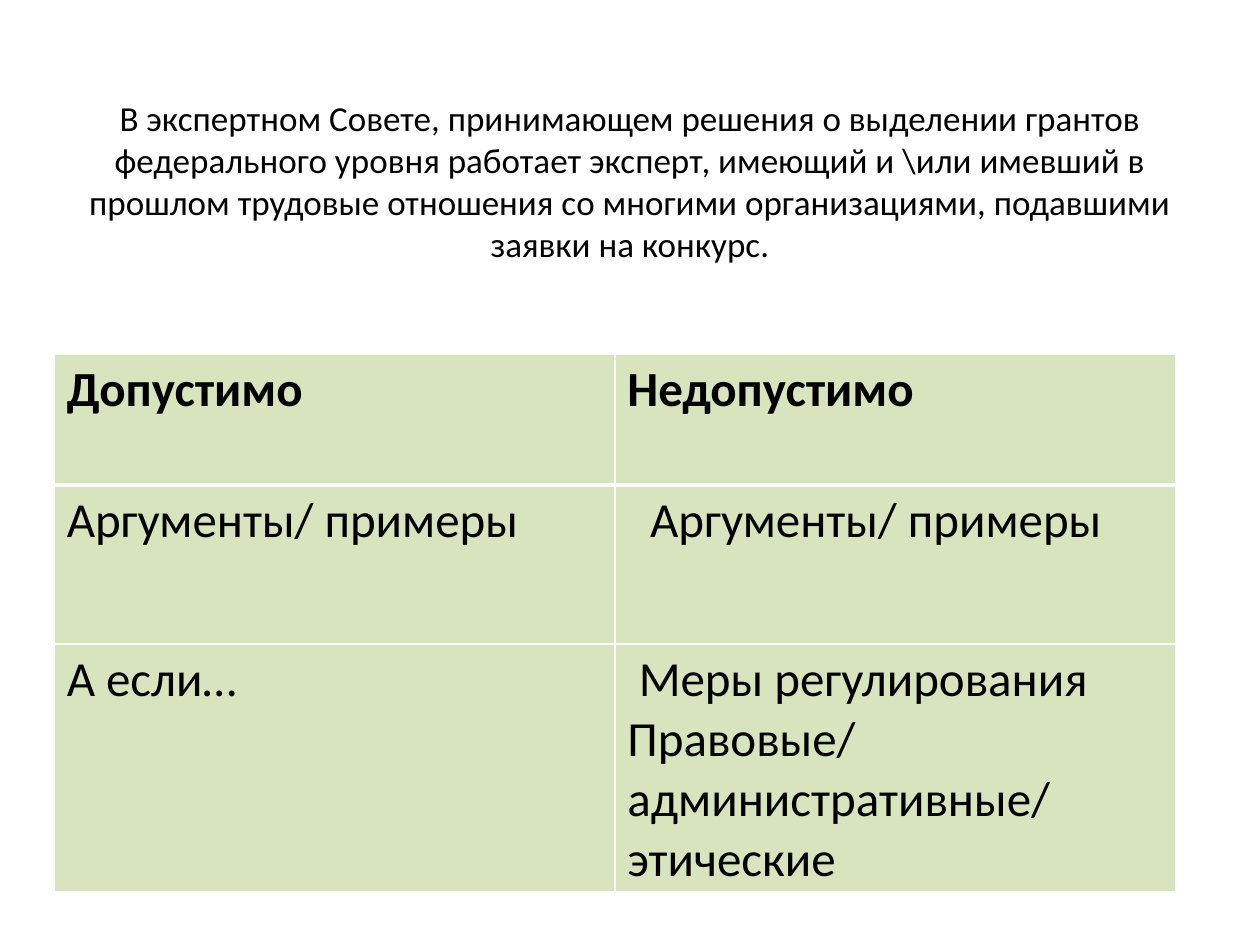
from lxml import etree
from pptx import Presentation
from pptx.dml.color import RGBColor
from pptx.enum.text import MSO_ANCHOR, PP_ALIGN
from pptx.oxml.ns import qn
from pptx.util import Inches, Pt

MIDDLE = MSO_ANCHOR.MIDDLE
CENTER = PP_ALIGN.CENTER
BLACK = RGBColor(0x00, 0x00, 0x00)
WHITE = RGBColor(0xFF, 0xFF, 0xFF)
GREEN = RGBColor(0xD7, 0xE4, 0xBD)
FONT = "Calibri"

QUESTION = (
    "В экспертном Совете, принимающем решения о выделении грантов "
    "федерального уровня работает эксперт, имеющий и \\или имевший в "
    "прошлом трудовые отношения со многими организациями, подавшими "
    "заявки на конкурс."
)
ROW_HEIGHTS = [1.04, 1.26, 1.97]
ROWS = [
    [[("Допустимо", 0)], [("Недопустимо", 0)]],
    [[("Аргументы/ примеры", 0)], [("Аргументы/ примеры", 0.18)]],
    [
        [("А если…", 0)],
        [("Меры регулирования", 0.09), ("Правовые/ административные/ этические", 0)],
    ],
]


def style_paragraph(para, size, bold=False):
    para.font.name = FONT
    para.font.size = Pt(size)
    para.font.bold = bold
    para.font.color.rgb = BLACK


def set_borders(cell, widths):
    properties = cell._tc.get_or_add_tcPr()
    for position, (side, width) in enumerate(widths.items()):
        line = etree.Element(qn(f"a:{side}"), w=str(Pt(width)))
        fill = etree.SubElement(line, qn("a:solidFill"))
        etree.SubElement(fill, qn("a:srgbClr"), val=str(WHITE))
        properties.insert(position, line)


def fill_cell(cell, lines, widths, bold):
    cell.fill.solid()
    cell.fill.fore_color.rgb = GREEN
    set_borders(cell, widths)
    frame = cell.text_frame
    for index, (text, indent) in enumerate(lines):
        para = frame.add_paragraph() if index else frame.paragraphs[0]
        para.text = text
        style_paragraph(para, 28, bold)
        if indent:
            para._p.get_or_add_pPr().set("indent", str(Inches(indent)))


def add_question(page, left, top, width, height):
    box = page.shapes.add_textbox(left, top, width, height)
    frame = box.text_frame
    frame.word_wrap = True
    frame.vertical_anchor = MIDDLE
    para = frame.paragraphs[0]
    para.text = QUESTION
    para.alignment = CENTER
    style_paragraph(para, 20)


def add_arguments(page, left, top, width, height):
    table = page.shapes.add_table(len(ROWS), 2, left, top, width, height).table
    table.horz_banding = False
    for row_index, row in enumerate(ROWS):
        table.rows[row_index].height = Inches(ROW_HEIGHTS[row_index])
        widths = {
            "lnL": 1,
            "lnR": 1,
            "lnT": 3 if row_index == 1 else 1,
            "lnB": 3 if row_index == 0 else 1,
        }
        for column_index, lines in enumerate(row):
            fill_cell(table.cell(row_index, column_index), lines, widths, row_index == 0)


def main():
    deck = Presentation()
    deck.slide_width = Inches(10)
    deck.slide_height = Inches(7.5)
    page = deck.slides.add_slide(deck.slide_layouts[6])
    add_question(page, Inches(0.5), Inches(0.3), Inches(9), Inches(2.27))
    add_arguments(page, Inches(0.43), Inches(2.81), Inches(8.9), Inches(sum(ROW_HEIGHTS)))
    deck.save("out.pptx")


if __name__ == "__main__":
    main()
